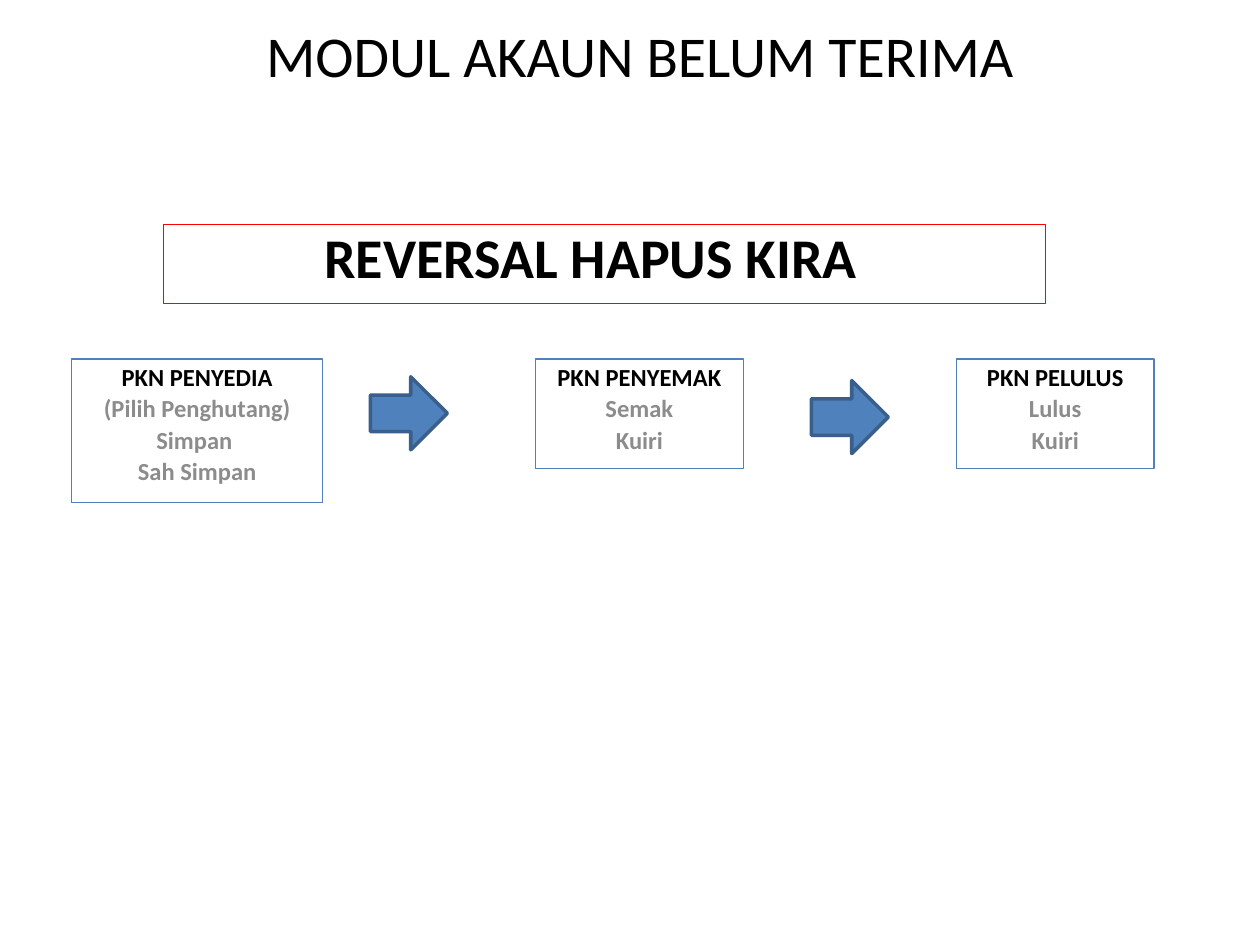
from pptx import Presentation, util as u
from pptx.dml.color import RGBColor
from pptx.enum import shapes, text


def tint(code):
    return RGBColor.from_string(code)


class Deck:
    """Holds the style and the current slide, and draws each kind of element."""

    font = "Calibri"
    black, grey, red, blue, navy = "000000", "8C8C8C", "FF0000", "4F81BD", "3A5F8C"

    def __init__(self, show):
        self.slide = show.slides.add_slide(show.slide_layouts[6])

    def label(self, frame, rows, size, bold, lead, gap):
        frame.word_wrap = True
        for i, (line, shade) in enumerate(rows):
            para = frame.paragraphs[0] if i == 0 else frame.add_paragraph()
            para.text = line
            para.alignment = text.PP_ALIGN.CENTER
            para.line_spacing = lead
            para.space_before = u.Pt(gap)
            font = para.font
            font.name, font.size, font.bold = self.font, u.Pt(size), bold
            font.color.rgb = tint(shade)

    def title(self, line, *area):
        frame = self.slide.shapes.add_textbox(*map(u.Inches, area)).text_frame
        frame.vertical_anchor = text.MSO_ANCHOR.MIDDLE
        self.label(frame, [(line, self.black)], 33, False, 0.8, 0)

    def shape(self, kind, area, edge, width):
        item = self.slide.shapes.add_shape(kind, *map(u.Inches, area))
        item.shadow.inherit = False
        item.line.color.rgb = tint(edge)
        item.line.width = u.Pt(width)
        return item

    def box(self, area, edge, rows, size):
        item = self.shape(shapes.MSO_SHAPE.RECTANGLE, area, edge, 0.75)
        item.fill.background()
        frame = item.text_frame
        frame.vertical_anchor = text.MSO_ANCHOR.TOP
        self.label(frame, rows, size, True, 0.9, size * 0.2)
        return frame

    def banner(self, line, *area):
        frame = self.box(area, self.red, [(line, self.black)], 32)
        frame.margin_right = u.Inches(0.32)

    def step(self, left, width, height, head, *acts):
        rows = [(head, self.black)] + [(act, self.grey) for act in acts]
        self.box((left, 2.85, width, height), self.blue, rows, 14)

    def arrow(self, left, top):
        kind = shapes.MSO_SHAPE.RIGHT_ARROW
        item = self.shape(kind, (left, top, 0.61, 0.58), self.navy, 2)
        item.fill.solid()
        item.fill.fore_color.rgb = tint(self.blue)


def main():
    show = Presentation()
    show.slide_width, show.slide_height = u.Inches(10), u.Inches(7.5)
    deck = Deck(show)
    deck.title("MODUL AKAUN BELUM TERIMA", 0.83, 0.21, 8.5, 0.55)
    deck.banner("REVERSAL HAPUS KIRA", 1.3, 1.78, 7, 0.63)
    deck.step(0.57, 1.99, 1.14, "PKN PENYEDIA", "(Pilih Penghutang)", "Simpan ", "Sah Simpan")
    deck.step(4.25, 1.65, 0.87, "PKN PENYEMAK", "Semak", "Kuiri")
    deck.step(7.59, 1.57, 0.87, "PKN PELULUS", "Lulus", "Kuiri")
    deck.arrow(2.94, 2.99)
    deck.arrow(6.44, 3.02)
    show.save("out.pptx")


if __name__ == "__main__":
    main()
